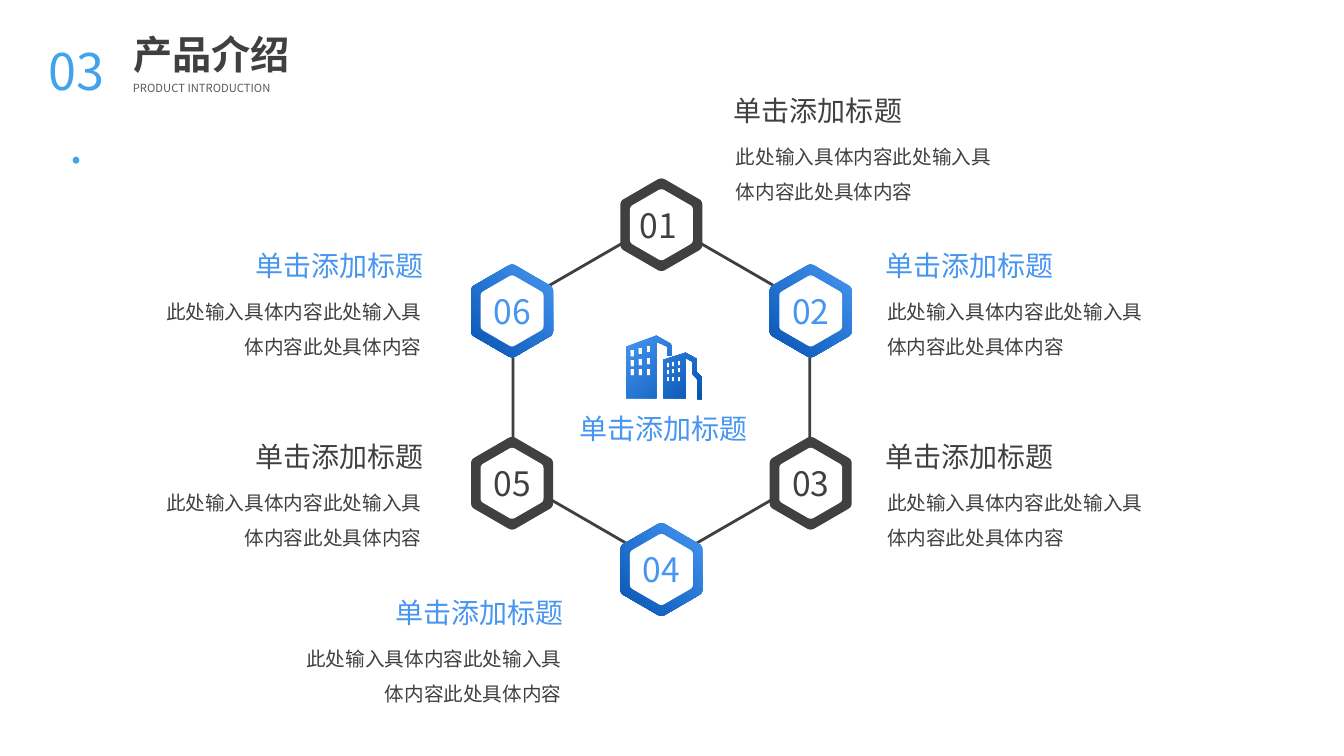
from math import cos, radians, sin

from lxml.etree import SubElement
from pptx import Presentation
from pptx.dml.color import RGBColor
from pptx.enum.text import MSO_ANCHOR, MSO_AUTO_SIZE, PP_ALIGN
from pptx.oxml.ns import qn
from pptx.util import Inches, Pt

DARK = RGBColor(0x40, 0x40, 0x40)
GREY = RGBColor(0x59, 0x59, 0x59)
WHITE = RGBColor(0xFF, 0xFF, 0xFF)
SKY = RGBColor(0x41, 0xA3, 0xEC)
BLUE = RGBColor(0x46, 0x96, 0xF1)
NAVY = RGBColor(0x07, 0x54, 0xB3)
SANS = "Noto Sans CJK SC"

HEADING = "单击添加标题"
DETAIL = "此处输入具体内容此处输入具体内容此处具体内容"
CALLOUTS = [
    ("01", 7.18, 0.91, PP_ALIGN.LEFT),
    ("02", 8.68, 2.45, PP_ALIGN.LEFT),
    ("03", 8.68, 4.34, PP_ALIGN.LEFT),
    ("04", 2.75, 5.89, PP_ALIGN.RIGHT),
    ("05", 1.36, 4.34, PP_ALIGN.RIGHT),
    ("06", 1.36, 2.45, PP_ALIGN.RIGHT),
]

BIG_TOWER = [(0.3, 0), (0.44, 0.08), (0.45, 0.1), (0.45, 0.2), (0.41, 0.2), (0.41, 0.11),
             (0.3, 0.06), (0.3, 0.62), (0, 0.62), (0, 0.11)]
SMALL_TOWER = [(0.59, 0.22), (0.66, 0.26), (0.66, 0.38), (0.71, 0.44), (0.71, 0.63),
               (0.75, 0.63), (0.75, 0.41), (0.7, 0.36), (0.7, 0.23), (0.59, 0.17),
               (0.37, 0.24), (0.37, 0.62), (0.59, 0.62)]


def write_text(shape, text, size, color, font=SANS, bold=False, align=PP_ALIGN.LEFT,
               spacing=1.0, anchor=MSO_ANCHOR.TOP, wrap=True, inset=None):
    frame = shape.text_frame
    frame.auto_size = MSO_AUTO_SIZE.NONE
    frame.word_wrap = wrap
    frame.vertical_anchor = anchor
    if inset is not None:
        frame.margin_left = frame.margin_right = Inches(inset)
        frame.margin_top = frame.margin_bottom = Inches(inset)
    para = frame.paragraphs[0]
    para.alignment = align
    para.line_spacing = spacing
    span = para.add_run()
    span.text = text
    span.font.size = Pt(size)
    span.font.bold = bold
    span.font.color.rgb = color
    span.font.name = font
    SubElement(span.font._element, qn("a:ea"), typeface=font)


def add_box(page, left, top, width, height):
    return page.shapes.add_textbox(Inches(left), Inches(top), Inches(width), Inches(height))


def add_outline(page, contours):
    unit = 1000
    contours = [[(x * unit, y * unit) for x, y in contour] for contour in contours]
    builder = page.shapes.build_freeform(*contours[0][0], scale=Inches(1) / unit)
    for number, contour in enumerate(contours):
        if number:
            builder.move_to(*contour[0])
        builder.add_line_segments(contour[1:], close=True)
    shape = builder.convert_to_shape()
    shape.shadow.inherit = False
    shape.line.fill.background()
    return shape


def fill_gradient(shape, angle):
    shape.fill.gradient()
    shape.fill.gradient_angle = angle
    for stop, color, position in zip(shape.fill.gradient_stops, (BLUE, NAVY), (0, 1)):
        stop.color.rgb = color
        stop.position = position


def hexagon_corner(x, y, radius, index):
    angle = radians(60 * index - 90)
    return x + radius * cos(angle), y + radius * sin(angle)


def add_hexagon(page, x, y, radius, rounding=0.09, steps=6):
    corners = [hexagon_corner(x, y, radius, index) for index in range(6)]
    points = []
    for index, corner in enumerate(corners):
        before, after = corners[index - 1], corners[(index + 1) % 6]
        for step in range(steps + 1):
            t = step / steps
            points.append(tuple(
                c + rounding * ((1 - t) ** 2 * (b - c) + t ** 2 * (a - c))
                for b, c, a in zip(before, corner, after)))
    return add_outline(page, [points])


def add_header(page, left, top):
    title = page.shapes.title
    title.left, title.top = Inches(left + 0.89), Inches(top + 0.02)
    title.width, title.height = Inches(2.09), Inches(0.57)
    write_text(title, "产品介绍", size=28, color=DARK, font="Arial", bold=True,
               align=PP_ALIGN.JUSTIFY)
    write_text(add_box(page, left + 0.89, top + 0.53, 2.47, 0.24), "PRODUCT INTRODUCTION",
               size=8, color=GREY, align=PP_ALIGN.JUSTIFY)
    write_text(add_box(page, left, top, 0.86, 0.78), "03.", size=36, color=SKY,
               align=PP_ALIGN.CENTER, spacing=1.2)


def add_badge(page, x, y, number, highlighted):
    rim = add_hexagon(page, x, y, 0.47)
    if highlighted:
        fill_gradient(rim, 225)
    else:
        rim.fill.solid()
        rim.fill.fore_color.rgb = DARK
    face = add_hexagon(page, x, y, 0.36)
    face.fill.solid()
    face.fill.fore_color.rgb = WHITE
    nudge = -0.03 if number == "01" else 0
    write_text(add_box(page, x - 0.3 + nudge, y - 0.25, 0.6, 0.5), number, size=24,
               color=BLUE if highlighted else DARK, align=PP_ALIGN.CENTER, wrap=False)


def window_grid(columns, rows, width, height):
    return [[(x, y - slant * column), (x + width, y - slant * column),
             (x + width, y - slant * column + height), (x, y - slant * column + height)]
            for y, slant in rows for column, x in enumerate(columns)]


def add_buildings(page, left, top):
    contours = [BIG_TOWER, SMALL_TOWER]
    contours += window_grid((0.04, 0.12, 0.2), ((0.14, 0.02), (0.24, 0.01), (0.33, 0)), 0.04, 0.07)
    contours += window_grid((0.4, 0.45, 0.51), ((0.27, 0.01), (0.34, 0.01), (0.41, 0)), 0.03, 0.05)
    icon = add_outline(page, [[(left + x, top + y) for x, y in contour] for contour in contours])
    fill_gradient(icon, 315)


def add_cycle(page, x, y):
    ring = add_hexagon(page, x, y - 0.05, 1.7)
    ring.fill.background()
    ring.line.color.rgb = DARK
    ring.line.width = Pt(2)
    for index, (number, *_) in enumerate(CALLOUTS):
        add_badge(page, *hexagon_corner(x, y, 1.71, index), number, highlighted=index % 2 == 1)
    add_buildings(page, x - 0.35, y - 0.61)
    write_text(add_box(page, x - 0.91, y + 0.18, 1.86, 0.3), HEADING, size=20, color=BLUE,
               align=PP_ALIGN.CENTER, spacing=0.9, inset=0)


def add_callout(page, left, top, align, color):
    at_right = align == PP_ALIGN.RIGHT
    heading = add_box(page, left + (0.7 if at_right else 0), top, 2.24, 0.41)
    write_text(heading, HEADING, size=20, color=color, align=align, spacing=0.9,
               anchor=MSO_ANCHOR.MIDDLE)
    detail = add_box(page, left + (0 if at_right else 0.02), top + 0.36, 2.92, 0.77)
    write_text(detail, DETAIL, size=14, color=DARK, align=align, spacing=1.5)


def main():
    deck = Presentation()
    deck.slide_width, deck.slide_height = Inches(13.33), Inches(7.5)
    page = deck.slides.add_slide(deck.slide_layouts[5])
    add_header(page, 0.33, 0.23)
    add_cycle(page, 6.56, 3.94)
    for index, (_, left, top, align) in enumerate(CALLOUTS):
        add_callout(page, left, top, align, BLUE if index % 2 else DARK)
    deck.save("out.pptx")


if __name__ == "__main__":
    main()
